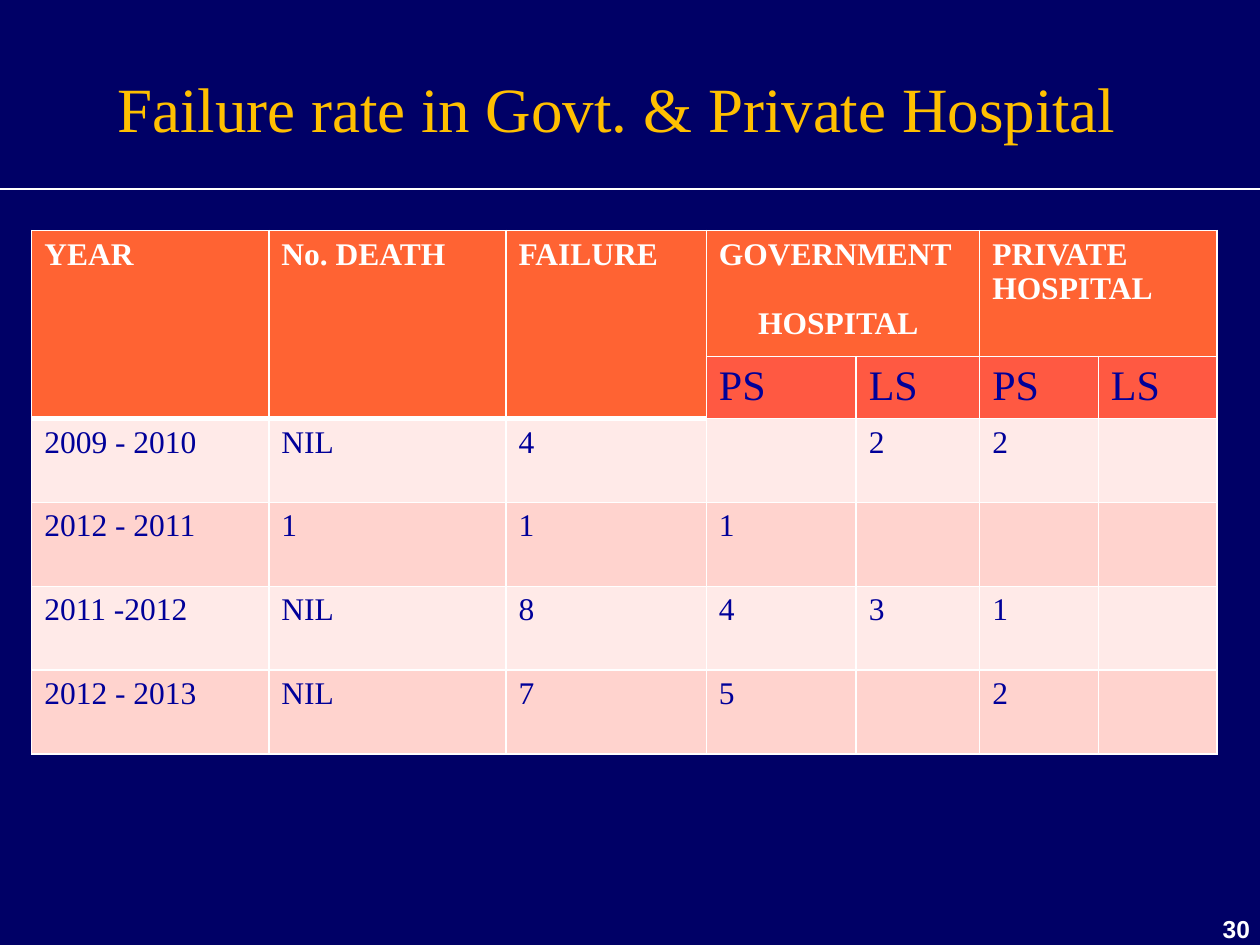
import pptx
import pptx.util
import pptx.dml.color
import pptx.enum.shapes
import pptx.enum.text
import pptx.oxml
import pptx.oxml.ns
from lxml import etree

Cm, Pt = pptx.util.Cm, pptx.util.Pt
RGB = pptx.dml.color.RGBColor
Align = pptx.enum.text.PP_ALIGN
Anchor = pptx.enum.text.MSO_ANCHOR

# Colours
NAVY = RGB(0x00, 0x00, 0x66)
BLUE = RGB(0x00, 0x00, 0x99)
GOLD = RGB(0xFF, 0xC0, 0x00)
WHITE = RGB(0xFF, 0xFF, 0xFF)
ORANGE = RGB(0xFF, 0x63, 0x33)
CORAL = RGB(0xFF, 0x59, 0x42)
PALE = RGB(0xFF, 0xEA, 0xE8)
PINK = RGB(0xFF, 0xD3, 0xCE)

# Content
TITLE = "Failure rate in Govt. & Private Hospital"
NUMBER = "30"
ROWS = [
    ["YEAR", "No. DEATH", "FAILURE", "GOVERNMENT\nHOSPITAL", "", "PRIVATE HOSPITAL", ""],
    ["", "", "", "PS", "LS", "PS", "LS"],
    ["2009 - 2010", "NIL", "4", "", "2", "2", ""],
    ["2012 - 2011", "1", "1", "1", "", "", ""],
    ["2011 -2012", "NIL", "8", "4", "3", "1", ""],
    ["2012 - 2013", "NIL", "7", "5", "", "2", ""],
]
MERGES = [((0, c), (1, c)) for c in range(3)] + [((0, c), (0, c + 1)) for c in (3, 5)]
WIDTHS = [4.78, 4.78, 4.04, 3.02, 2.49, 2.39, 2.39]
HEIGHTS = [2.54, 1.25] + [1.69] * 4

# Text formats
SERIF = "Times New Roman"
HEAD = {"name": SERIF, "size": Pt(18), "bold": True}
SUB = {"name": SERIF, "size": Pt(24), "bold": False}
BODY = {"name": SERIF, "size": Pt(18), "bold": False}
TOP = {"name": SERIF, "size": Pt(36), "bold": False}
FOOT = {"name": "Arial", "size": Pt(14), "bold": True}

# Row styles: fill, text colour, text format
STYLES = [(ORANGE, WHITE, HEAD), (CORAL, BLUE, SUB)] + [(PALE, BLUE, BODY), (PINK, BLUE, BODY)] * 2


def write(frame, text, form, color, align=Align.LEFT):
    frame.text = text
    for para in frame.paragraphs:
        para.alignment = align
        for key, value in form.items():
            setattr(para.font, key, value)
        para.font.color.rgb = color


def border(cell, base):
    props = cell._tc.get_or_add_tcPr()
    for spot, side in enumerate("LRTB"):
        width = base if side == "B" else 1
        line = pptx.oxml.parse_xml(
            f'<a:ln{side} {pptx.oxml.ns.nsdecls("a")} w="{Pt(width)}"><a:solidFill>'
            f'<a:srgbClr val="{WHITE}"/></a:solidFill></a:ln{side}>')
        props.insert(spot, line)


def main():
    deck = pptx.Presentation()
    deck.slide_width, deck.slide_height = Cm(25.4), Cm(19.05)
    slide = deck.slides.add_slide(deck.slide_layouts[5])
    slide.background.fill.solid()
    slide.background.fill.fore_color.rgb = NAVY

    # Rule under the title
    rule = slide.shapes.add_connector(
        pptx.enum.shapes.MSO_CONNECTOR.STRAIGHT, 0, Cm(3.81), deck.slide_width, Cm(3.81))
    rule.line.color.rgb = WHITE
    rule.line.width = Pt(1)
    etree.SubElement(rule._element.spPr, pptx.oxml.ns.qn("a:effectLst"))

    # Title
    title = slide.shapes.title
    title.left, title.top, title.width, title.height = Cm(2.11), Cm(1.27), Cm(20.75), Cm(1.8)
    write(title.text_frame, TITLE, TOP, GOLD)
    title.text_frame.vertical_anchor = Anchor.TOP
    title.text_frame.auto_size = pptx.enum.text.MSO_AUTO_SIZE.NONE

    # Table
    table = slide.shapes.add_table(
        len(ROWS), len(WIDTHS), Cm(0.64), Cm(4.65), Cm(sum(WIDTHS)), Cm(sum(HEIGHTS))).table
    for col, width in zip(table.columns, WIDTHS):
        col.width = Cm(width)
    for row, height in zip(table.rows, HEIGHTS):
        row.height = Cm(height)
    for r, (texts, (fill, color, form)) in enumerate(zip(ROWS, STYLES)):
        for c, text in enumerate(texts):
            cell = table.cell(r, c)
            write(cell.text_frame, text, form, color)
            cell.fill.solid()
            cell.fill.fore_color.rgb = fill
            border(cell, 3 if r < 2 and c < 3 else 1)
    for start, end in MERGES:
        table.cell(*start).merge(table.cell(*end))

    # Second line of the government heading is lower and indented
    para = table.cell(0, 3).text_frame.paragraphs[1]
    para.space_before = Pt(20)
    para._p.get_or_add_pPr().set("marL", str(Cm(0.79)))

    # Slide number
    box = slide.shapes.add_textbox(Cm(20.32), Cm(18.42), Cm(4.88), Cm(0.56))
    frame = box.text_frame
    for side in ("left", "right", "top", "bottom"):
        setattr(frame, f"margin_{side}", 0)
    frame.word_wrap = True
    write(frame, NUMBER, FOOT, WHITE, Align.RIGHT)

    deck.save("out.pptx")


if __name__ == "__main__":
    main()
